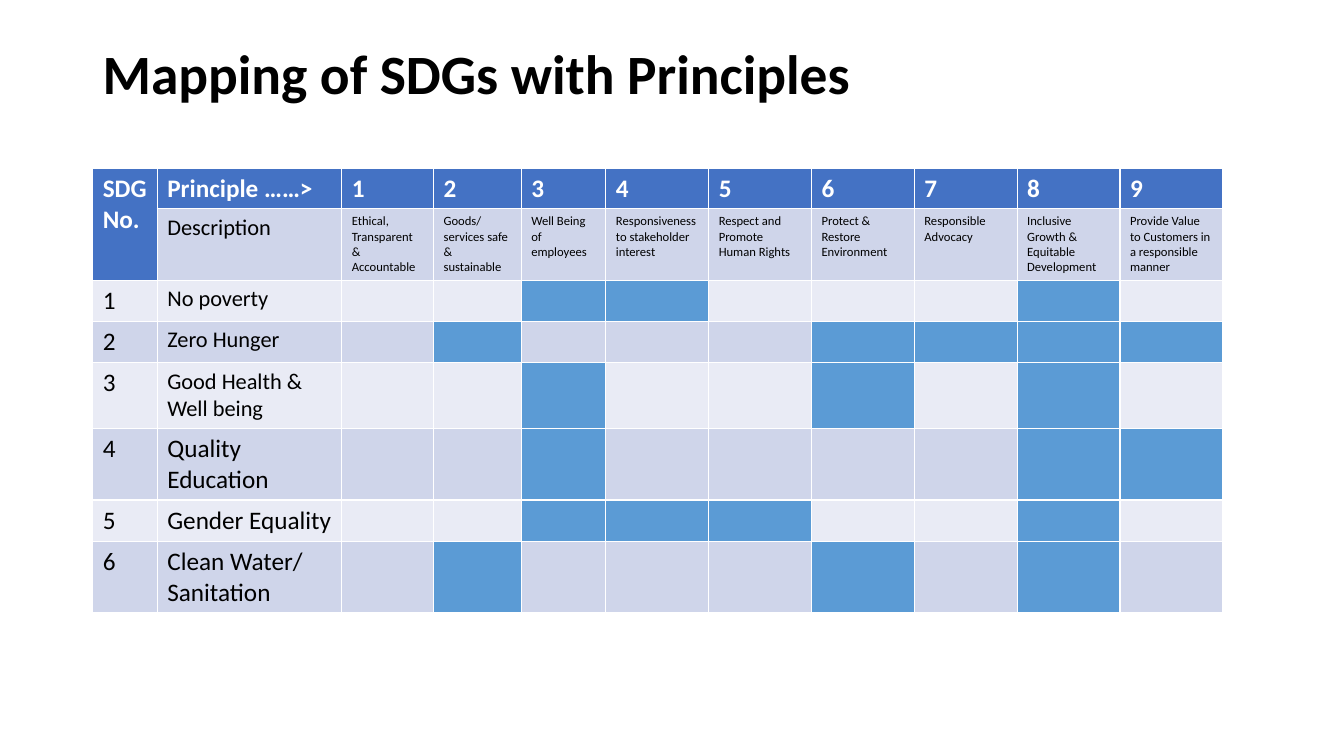
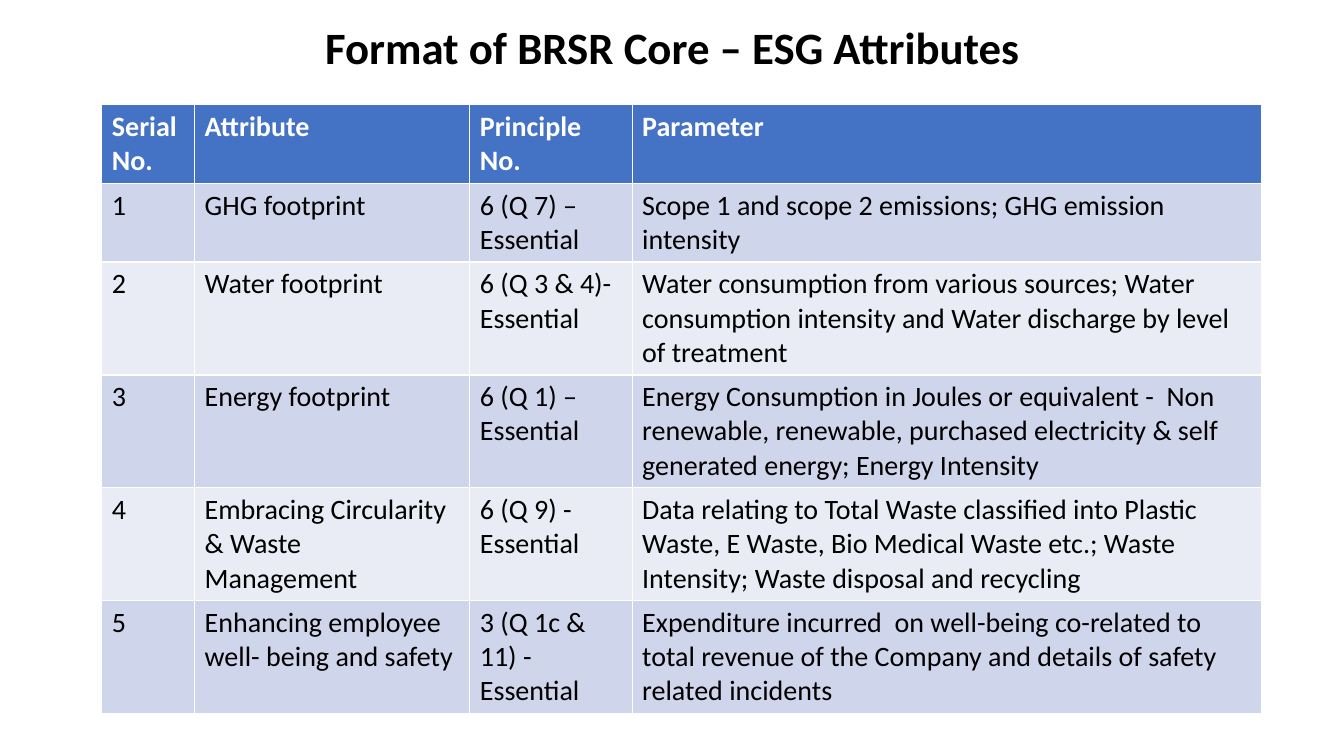
import pptx
import pptx.util
import pptx.dml.color
import pptx.enum.text

Inches = pptx.util.Inches
Pt = pptx.util.Pt
rgb = pptx.dml.color.RGBColor.from_string
PP_ALIGN = pptx.enum.text.PP_ALIGN

FONT = "Calibri"
BLACK, WHITE = "000000", "FFFFFF"
HEADER, BAND_DARK, BAND_LIGHT, MATCH = "4472C4", "CFD5EA", "E9EBF5", "5B9BD5"

prs = pptx.Presentation()
prs.slide_width = Inches(13.33)
prs.slide_height = Inches(7.5)


def add_title_slide(title, top, height, size, align):
    s = prs.slides.add_slide(prs.slide_layouts[6])
    tf = s.shapes.add_textbox(Inches(0.92), Inches(top), Inches(11.5), Inches(height)).text_frame
    tf.word_wrap = True
    tf.vertical_anchor = pptx.enum.text.MSO_ANCHOR.MIDDLE
    p = tf.paragraphs[0]
    p.text = title
    p.alignment = align
    p.line_spacing = 0.9
    p.font.name = FONT
    p.font.size = Pt(size)
    p.font.bold = True
    p.font.color.rgb = rgb(BLACK)
    return s


def add_banded_table(s, left, top, widths, heights, rows, size):
    table = s.shapes.add_table(len(rows), len(widths), Inches(left), Inches(top),
                               Inches(sum(widths)), Inches(sum(heights))).table
    for column, width in zip(table.columns, widths):
        column.width = Inches(width)
    for i, (row, height, texts) in enumerate(zip(table.rows, heights, rows)):
        row.height = Inches(height)
        fill = HEADER if i == 0 else BAND_DARK if i % 2 else BAND_LIGHT
        for cell, text in zip(row.cells, texts):
            cell.fill.solid()
            cell.fill.fore_color.rgb = rgb(fill)
            cell.text = text
            for p in cell.text_frame.paragraphs:
                p.font.name = FONT
                p.font.size = Pt(size)
                p.font.bold = i == 0
                p.font.color.rgb = rgb(WHITE if i == 0 else BLACK)
    return table


s = add_title_slide("Mapping of SDGs with Principles", 0.4, 0.72, 39.6, PP_ALIGN.LEFT)

principles = [
    "Ethical, Transparent & Accountable",
    "Goods/\nservices safe & sustainable",
    "Well Being of employees",
    "Responsiveness to stakeholder interest",
    "Respect and Promote Human Rights",
    "Protect & Restore Environment",
    "Responsible Advocacy",
    "Inclusive Growth & Equitable Development",
    "Provide Value to Customers in a responsible manner",
]
goals = [
    ("No poverty", [3, 4, 8]),
    ("Zero Hunger", [2, 6, 7, 8, 9]),
    ("Good Health & Well being", [3, 6, 8]),
    ("Quality Education", [3, 8, 9]),
    ("Gender Equality", [3, 4, 5, 8]),
    ("Clean Water/\nSanitation", [2, 6, 8]),
]
rows = [
    ["SDG\nNo.", "Principle ……>"] + [str(n) for n in range(1, 10)],
    ["", "Description"] + principles,
]
for number, (goal, matches) in enumerate(goals, 1):
    rows.append([str(number), goal] + [""] * len(principles))

table = add_banded_table(s, 0.92, 1.67, [0.64, 1.83, 0.91, 0.87, 0.84] + [1.02] * 6,
                         [0.4, 0.71, 0.41, 0.41, 0.65, 0.71, 0.41, 0.71], rows, 18)
table.cell(0, 0).merge(table.cell(1, 0))
for r in range(1, 5):
    table.cell(r, 1).text_frame.paragraphs[0].font.size = Pt(16)
for c in range(2, 11):
    for p in table.cell(1, c).text_frame.paragraphs:
        p.font.size = Pt(9)
for r, (goal, matches) in enumerate(goals, 2):
    for principle in matches:
        table.cell(r, principle + 1).fill.fore_color.rgb = rgb(MATCH)

s = add_title_slide("Format of BRSR Core – ESG Attributes", 0.2, 0.6, 32, PP_ALIGN.CENTER)

rows = [
    ["Serial No.", "Attribute", "Principle No.", "Parameter"],
    ["1", "GHG footprint", "6 (Q 7) –\nEssential",
     "Scope 1 and scope 2 emissions; GHG emission intensity"],
    ["2", "Water footprint", "6 (Q 3 & 4)-\nEssential",
     "Water consumption from various sources; Water consumption intensity "
     "and Water discharge by level of treatment"],
    ["3", "Energy footprint", "6 (Q 1) –\nEssential",
     "Energy Consumption in Joules or equivalent -  Non renewable, renewable, "
     "purchased electricity & self generated energy; Energy Intensity"],
    ["4", "Embracing Circularity & Waste Management", "6 (Q 9) - Essential",
     "Data relating to Total Waste classified into Plastic Waste, E Waste, "
     "Bio Medical Waste etc.; Waste Intensity; Waste disposal and recycling"],
    ["5", "Enhancing employee well- being and safety", "3 (Q 1c & 11) - Essential",
     "Expenditure incurred  on well-being co-related to total revenue of the "
     "Company and details of safety related incidents"],
]
add_banded_table(s, 1.01, 1.04, [0.92, 2.73, 1.61, 6.24], [0.78] * 2 + [1.12] * 4, rows, 20)

prs.save("out.pptx")
